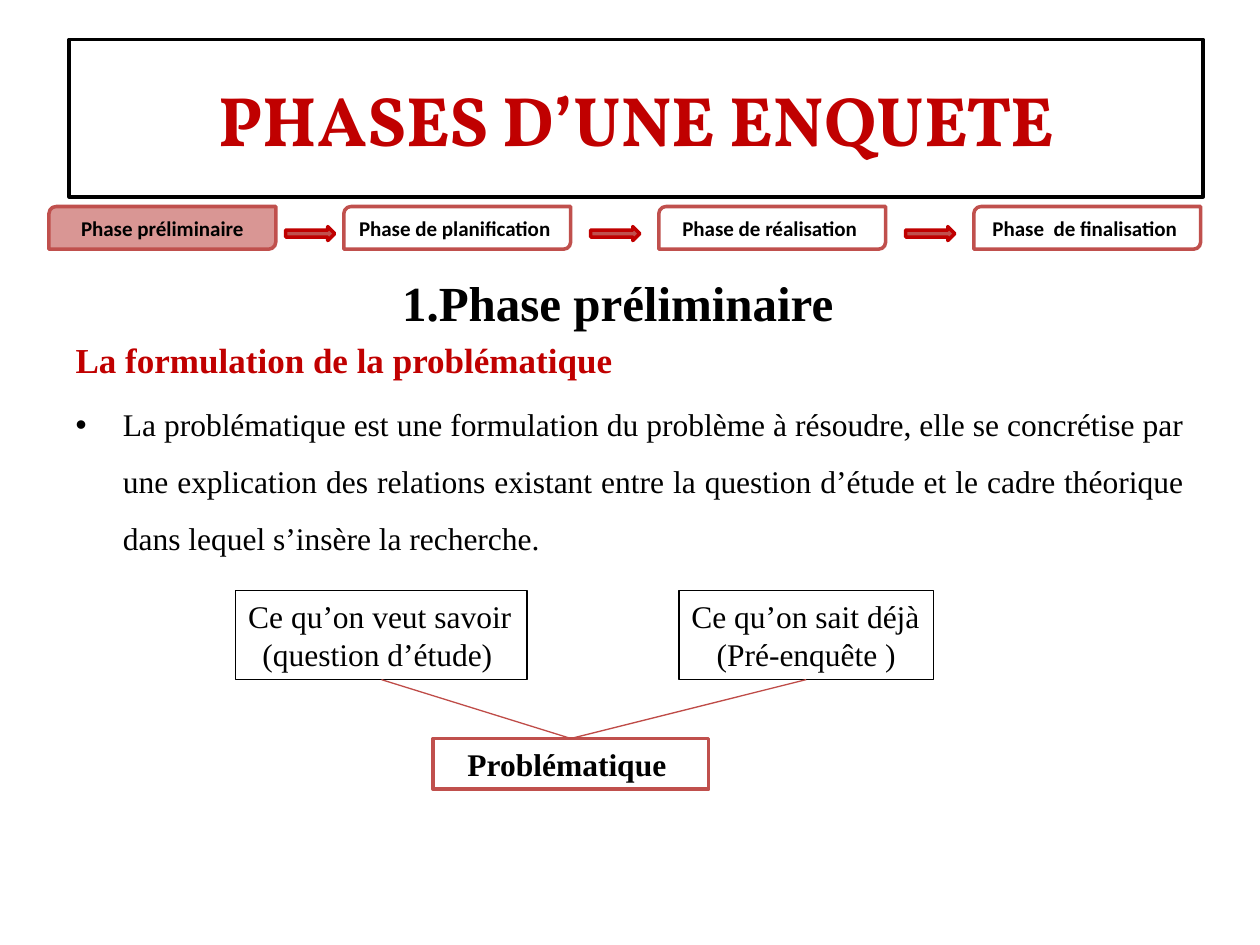
from lxml import etree
from pptx import Presentation
from pptx.dml.color import RGBColor
from pptx.enum.shapes import MSO_CONNECTOR, MSO_SHAPE
from pptx.enum.text import MSO_ANCHOR, MSO_AUTO_SIZE, PP_ALIGN as ALIGN
from pptx.oxml.ns import qn
from pptx.util import Pt

RED, ACCENT, BLACK, WHITE = "C00000", "C0504D", "000000", "FFFFFF"
SERIF = "Times New Roman"


def style_text(paragraph, font_name, size, color, bold, alignment):
    paragraph.alignment = alignment
    for run in paragraph.runs:
        run.font.name = font_name
        run.font.size = Pt(size)
        run.font.bold = bold
        run.font.color.rgb = RGBColor.from_string(color)


def add_box(kind, left, top, width, height, fill, line, line_width):
    shape = slide.shapes.add_shape(kind, Pt(left), Pt(top), Pt(width), Pt(height))
    shape.shadow.inherit = False
    if fill:
        shape.fill.solid()
        shape.fill.fore_color.rgb = RGBColor.from_string(fill)
    else:
        shape.fill.background()
    shape.line.color.rgb = RGBColor.from_string(line)
    shape.line.width = Pt(line_width)
    return shape


presentation = Presentation()
presentation.slide_width, presentation.slide_height = Pt(720), Pt(540)
slide = presentation.slides.add_slide(presentation.slide_layouts[1])

# Framed title
title = slide.shapes.title
title.left, title.top, title.width, title.height = Pt(39.5), Pt(22.5), Pt(648), Pt(90)
title.fill.solid()
title.fill.fore_color.rgb = RGBColor.from_string(WHITE)
title.line.color.rgb = RGBColor.from_string(BLACK)
title.line.width = Pt(2)
title.text_frame.text = "PHASES D’UNE ENQUETE"
title.text_frame.vertical_anchor = MSO_ANCHOR.MIDDLE
style_text(title.text_frame.paragraphs[0], "Vollkorn", 40, RED, True, ALIGN.CENTER)

# Body: heading, subheading and one bullet
body = slide.placeholders[1]
body.left, body.top, body.width, body.height = Pt(36), Pt(152), Pt(648), Pt(360)
body_lines = [
    ("1.Phase préliminaire  ", 28, BLACK, True, ALIGN.CENTER),
    ("La formulation de la problématique", 20, RED, True, ALIGN.LEFT),
    ("La problématique est une formulation du problème à résoudre, elle se "
     "concrétise par une explication des relations existant entre la question "
     "d’étude et le cadre théorique dans lequel s’insère la recherche.",
     18, BLACK, False, ALIGN.JUSTIFY),
]
body.text_frame.text = "\n".join(line[0] for line in body_lines)
body.text_frame.auto_size = MSO_AUTO_SIZE.NONE
for paragraph, (_, size, color, bold, alignment) in zip(
        body.text_frame.paragraphs, body_lines):
    style_text(paragraph, SERIF, size, color, bold, alignment)
    properties = paragraph._p.get_or_add_pPr()
    properties.set("marL", str(Pt(27)))
    properties.set("indent", str(Pt(-27)))
    if bold:
        etree.SubElement(properties, qn("a:buNone"))
    else:
        paragraph.line_spacing = 1.5
        etree.SubElement(properties, qn("a:buChar")).set("char", "•")

# Phase chain, current phase highlighted
phases = [
    ("Phase préliminaire", 28, "D99694"),
    ("Phase de planification ", 196.5, WHITE),
    ("Phase de réalisation ", 376.5, WHITE),
    ("Phase  de finalisation ", 556.5, WHITE),
]
for text, left, fill in phases:
    phase = add_box(MSO_SHAPE.ROUND_2_DIAG_RECTANGLE, left, 118, 129.6, 24.4,
                    fill, ACCENT, 2)
    phase.text_frame.text = text
    style_text(phase.text_frame.paragraphs[0], "Calibri", 12, BLACK, True, ALIGN.CENTER)

for left in (163.2, 337.5, 517.5):
    add_box(MSO_SHAPE.RIGHT_ARROW, left, 129.5, 28.1, 8, ACCENT, RED, 2)

# Diagram: two sources leading to the problem statement
goal = add_box(MSO_SHAPE.RECTANGLE, 247.5, 422, 157.5, 29, WHITE, ACCENT, 2)
goal.text_frame.text = "Problématique "
style_text(goal.text_frame.paragraphs[0], SERIF, 18, BLACK, True, ALIGN.CENTER)

sources = [
    ("Ce qu’on veut savoir", "(question d’étude) ", 134.8, 166.4),
    ("Ce qu’on sait déjà", "(Pré-enquête )", 388, 145.4),
]
for heading, detail, left, width in sources:
    source = add_box(MSO_SHAPE.RECTANGLE, left, 337.5, width, 50.9, None, BLACK, 0.75)
    source.text_frame.text = f"{heading}\n{detail}"
    source.text_frame.word_wrap = False
    for paragraph, alignment in zip(source.text_frame.paragraphs,
                                    (ALIGN.LEFT, ALIGN.CENTER)):
        style_text(paragraph, SERIF, 18, BLACK, False, alignment)
    connector = slide.shapes.add_connector(MSO_CONNECTOR.STRAIGHT, 0, 0, 0, 0)
    connector.begin_connect(source, 2)
    connector.end_connect(goal, 0)
    connector.line.color.rgb = RGBColor.from_string("BF4C48")
    connector.line.width = Pt(0.75)
    etree.SubElement(connector._element.spPr, qn("a:effectLst"))

presentation.save("out.pptx")
